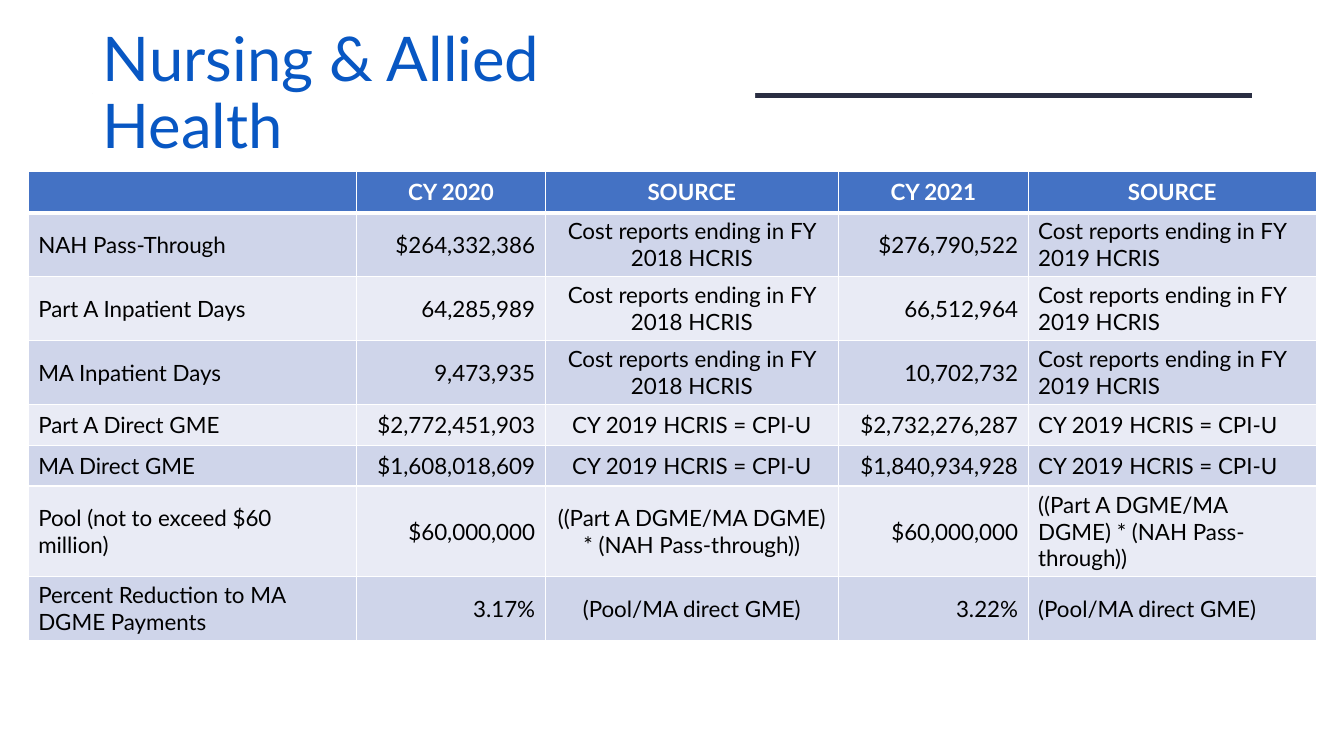
from lxml.etree import SubElement
from pptx import Presentation
from pptx.dml.color import RGBColor
from pptx.enum.shapes import MSO_CONNECTOR as Connector
from pptx.enum.text import MSO_ANCHOR as Anchor, PP_ALIGN as Align
from pptx.oxml.ns import qn
from pptx.util import Cm, Pt

TITLE = "Nursing & Allied Health"
HEADER = ("", "CY 2020", "SOURCE", "CY 2021", "SOURCE")
REPORTS_2018 = "Cost reports ending in FY 2018 HCRIS"
REPORTS_2019 = "Cost reports ending in FY 2019 HCRIS"
INDEXED = "CY 2019 HCRIS = CPI-U"
POOL = "((Part A DGME/MA DGME) * (NAH Pass-through))"
REDUCTION = "(Pool/MA direct GME)"
ROWS = [
    ("NAH Pass-Through", "$264,332,386", REPORTS_2018, "$276,790,522", REPORTS_2019),
    ("Part A Inpatient Days", "64,285,989", REPORTS_2018, "66,512,964", REPORTS_2019),
    ("MA Inpatient Days", "9,473,935", REPORTS_2018, "10,702,732", REPORTS_2019),
    ("Part A Direct GME", "$2,772,451,903", INDEXED, "$2,732,276,287", INDEXED),
    ("MA Direct GME", "$1,608,018,609", INDEXED, "$1,840,934,928", INDEXED),
    ("Pool (not to exceed $60 million)", "$60,000,000", POOL, "$60,000,000", POOL),
    ("Percent Reduction to MA DGME Payments", "3.17%", REDUCTION, "3.22%", REDUCTION),
]
COLUMN_WIDTHS = (8.28, 4.75, 7.39, 4.78, 7.26)
COLUMN_ALIGNS = (Align.LEFT, Align.RIGHT, Align.CENTER, Align.RIGHT, Align.LEFT)
ROW_HEIGHT = 1.03
COLORS = {"white": "FFFFFF", "black": "000000", "title": "0857C3", "rule": "2A2E42",
          "header": "4472C4", "odd": "CFD5EA", "even": "E9EBF5"}
TITLE_FRAME = {"word_wrap": True, "vertical_anchor": Anchor.MIDDLE,
               "margin_left": Cm(0.25), "margin_right": Cm(0.8),
               "margin_top": Cm(0.13), "margin_bottom": Cm(0.13)}
TITLE_FONT = {"name": "Lato", "size": Pt(44)}
HEADER_FONT = {"name": "Lato", "size": Pt(16), "bold": True}
BODY_FONT = {"name": "Lato", "size": Pt(16), "bold": False}


def color(name):
    """Return the named colour."""
    return RGBColor.from_string(COLORS[name])


def apply(target, formats):
    """Set every format value on the target."""
    for name, value in formats.items():
        setattr(target, name, value)


def write(paragraph, text, font, color_name):
    """Add one formatted run to a paragraph."""
    run = paragraph.add_run()
    run.text = text
    apply(run.font, font)
    run.font.color.rgb = color(color_name)


def add_rule(slide):
    """Draw the horizontal rule behind the title."""
    rule = slide.shapes.add_connector(Connector.STRAIGHT, Cm(2.34), Cm(2.41), Cm(31.55), Cm(2.41))
    rule.line.color.rgb = color("rule")
    rule.line.width = Pt(3.5)
    SubElement(rule._element.spPr, qn("a:effectLst"))


def add_title(slide):
    """Add the title on a white field that hides part of the rule."""
    title = slide.shapes.add_textbox(Cm(2.34), Cm(0.56), Cm(16.69), Cm(3.68))
    title.fill.solid()
    title.fill.fore_color.rgb = color("white")
    apply(title.text_frame, TITLE_FRAME)
    paragraph = title.text_frame.paragraphs[0]
    paragraph.line_spacing = 0.9
    write(paragraph, TITLE, TITLE_FONT, "title")


def add_borders(cell, bottom_width):
    """Give a cell white borders."""
    properties = cell._tc.get_or_add_tcPr()
    for side, width in (("L", 1), ("R", 1), ("T", 1), ("B", bottom_width)):
        line = SubElement(properties, qn(f"a:ln{side}"), w=str(Pt(width)))
        fill = SubElement(line, qn("a:solidFill"))
        SubElement(fill, qn("a:srgbClr"), val=COLORS["white"])


def add_payment_table(slide):
    """Add the table of payments and their sources."""
    rows = [HEADER, *ROWS]
    table = slide.shapes.add_table(len(rows), len(HEADER), Cm(0.71), Cm(4.33),
                                   Cm(sum(COLUMN_WIDTHS)), Cm(ROW_HEIGHT * len(rows))).table
    for column, width in zip(table.columns, COLUMN_WIDTHS):
        column.width = Cm(width)
    for row_index, texts in enumerate(rows):
        is_header = row_index == 0
        fill_name = "header" if is_header else ("even", "odd")[row_index % 2]
        font, font_color = (HEADER_FONT, "white") if is_header else (BODY_FONT, "black")
        for column_index, text in enumerate(texts):
            cell = table.cell(row_index, column_index)
            add_borders(cell, 3 if is_header else 1)
            cell.fill.solid()
            cell.fill.fore_color.rgb = color(fill_name)
            cell.vertical_anchor = Anchor.MIDDLE
            paragraph = cell.text_frame.paragraphs[0]
            paragraph.alignment = Align.CENTER if is_header else COLUMN_ALIGNS[column_index]
            if text:
                write(paragraph, text, font, font_color)


def main():
    """Build and save the slide."""
    presentation = Presentation()
    apply(presentation, {"slide_width": Cm(33.87), "slide_height": Cm(19.05)})
    slide = presentation.slides.add_slide(presentation.slide_layouts[6])
    add_rule(slide)
    add_title(slide)
    add_payment_table(slide)
    presentation.save("out.pptx")


if __name__ == "__main__":
    main()
